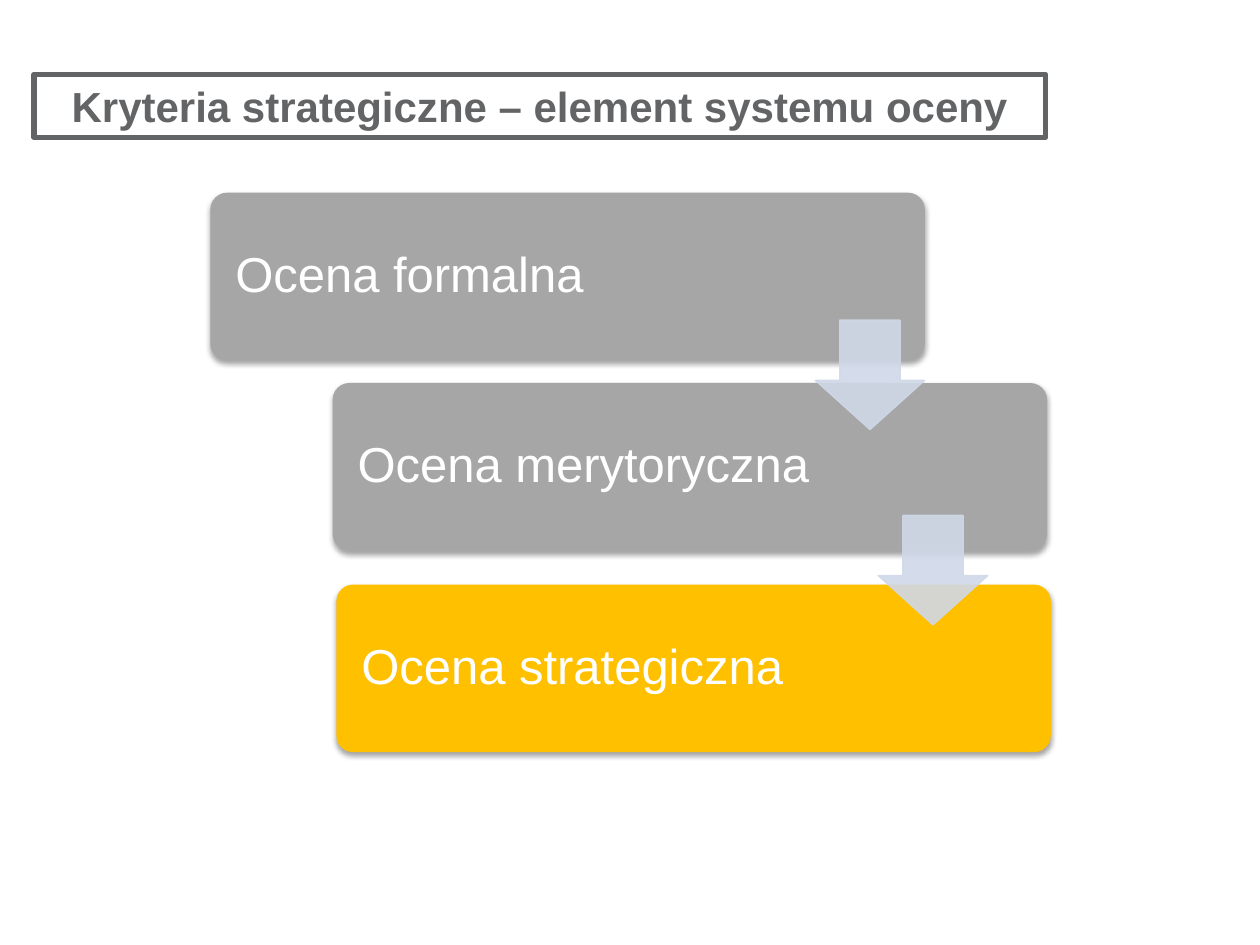
"""Build a slide showing the three steps of the evaluation system."""
from dataclasses import dataclass

from lxml import etree
from pptx import Presentation
from pptx.dml.color import RGBColor
from pptx.enum.shapes import MSO_SHAPE
from pptx.enum.text import MSO_ANCHOR, MSO_AUTO_SIZE, PP_ALIGN
from pptx.oxml.ns import qn
from pptx.util import Inches, Pt

RECTANGLE = MSO_SHAPE.RECTANGLE
ROUNDED = MSO_SHAPE.ROUNDED_RECTANGLE
DOWN_ARROW = MSO_SHAPE.DOWN_ARROW
MIDDLE = MSO_ANCHOR.MIDDLE
TOP = MSO_ANCHOR.TOP
FIT_SHAPE = MSO_AUTO_SIZE.SHAPE_TO_FIT_TEXT
LEFT = PP_ALIGN.LEFT
JUSTIFY = PP_ALIGN.JUSTIFY


@dataclass(frozen=True)
class Theme:
    """Hold the colours and type of the slide."""
    font: str = "Arial"
    heading: str = "636466"
    step: str = "A6A6A6"
    highlight: str = "FFC000"
    step_text: str = "FFFFFF"
    arrow: str = "D0D8E8"
    heading_size: int = 24
    step_size: int = 28


THEME = Theme()


def apply(target, values):
    """Set every given format value on the target."""
    for name, value in values.items():
        setattr(target, name, value)


def add_plain_shape(slide, preset, left, top, width, height, adjustments=()):
    """Add a preset shape without a shadow."""
    shape = slide.shapes.add_shape(
        preset, Inches(left), Inches(top), Inches(width), Inches(height))
    shape.shadow.inherit = False
    for index, value in enumerate(adjustments):
        shape.adjustments[index] = value
    return shape


def paint(fill, color):
    """Give a fill one solid colour."""
    fill.solid()
    fill.fore_color.rgb = RGBColor.from_string(color)


def write(shape, text, color, frame_format, paragraph_format, font_format):
    """Write one formatted paragraph in a shape."""
    frame = shape.text_frame
    frame.text = text
    paragraph = frame.paragraphs[0]
    font = paragraph.runs[0].font
    apply(frame, frame_format)
    apply(paragraph, paragraph_format)
    apply(font, {"name": THEME.font, **font_format})
    font.color.rgb = RGBColor.from_string(color)
    return paragraph


def add_heading(slide, text):
    """Add the framed heading."""
    heading = add_plain_shape(slide, RECTANGLE, 0.27, 0.59, 8.03, 0.5)
    heading.fill.background()
    paint(heading.line.fill, THEME.heading)
    heading.line.width = Pt(3)
    paragraph = write(
        heading, text, THEME.heading,
        {"word_wrap": True, "auto_size": FIT_SHAPE, "vertical_anchor": TOP},
        {"alignment": JUSTIFY, "space_after": Pt(6)},
        {"size": Pt(THEME.heading_size), "bold": True})
    paragraph._p.get_or_add_pPr().set("marL", str(Inches(0.2)))


def add_soft_shadow(shape):
    """Add a faint shadow straight below a shape."""
    effects = shape._element.spPr.find(qn("a:effectLst"))
    shadow = etree.SubElement(
        effects, qn("a:outerShdw"), blurRad=str(Pt(3.1)), dist=str(Pt(1.8)),
        dir="5400000", rotWithShape="0")
    color = etree.SubElement(shadow, qn("a:srgbClr"), val="000000")
    etree.SubElement(color, qn("a:alpha"), val="35000")


def add_step(slide, text, left, top, color):
    """Add one step card with its label."""
    card = add_plain_shape(slide, ROUNDED, left, top, 5.67, 1.33, [0.1])
    paint(card.fill, color)
    card.line.fill.background()
    add_soft_shadow(card)
    write(
        card, text, THEME.step_text,
        {"word_wrap": True, "vertical_anchor": MIDDLE,
         "margin_left": Inches(0.16), "margin_right": Inches(0.16)},
        {"alignment": LEFT, "line_spacing": 0.9},
        {"size": Pt(THEME.step_size)})


def add_step_arrow(slide, left, top):
    """Add a translucent arrow leading to the next step."""
    arrow = add_plain_shape(
        slide, DOWN_ARROW, left, top, 0.87, 0.87, [0.55, 0.45])
    paint(arrow.fill, THEME.arrow)
    paint(arrow.line.fill, THEME.arrow)
    arrow.line.width = Pt(0.75)
    for color in arrow._element.spPr.iter(qn("a:srgbClr")):
        etree.SubElement(color, qn("a:alpha"), val="90000")


def main():
    """Build and save the slide."""
    presentation = Presentation()
    apply(presentation,
          {"slide_width": Inches(10), "slide_height": Inches(7.5)})
    slide = presentation.slides.add_slide(presentation.slide_layouts[6])
    add_heading(slide, "Kryteria strategiczne – element systemu oceny")
    steps = [
        ("Ocena formalna", 1.67, 1.53, THEME.step),
        ("Ocena merytoryczna", 2.64, 3.04, THEME.step),
        ("Ocena strategiczna", 2.67, 4.64, THEME.highlight),
    ]
    for step in steps:
        add_step(slide, *step)
    for left, top in [(6.47, 2.54), (6.97, 4.09)]:
        add_step_arrow(slide, left, top)
    presentation.save("out.pptx")


if __name__ == "__main__":
    main()
